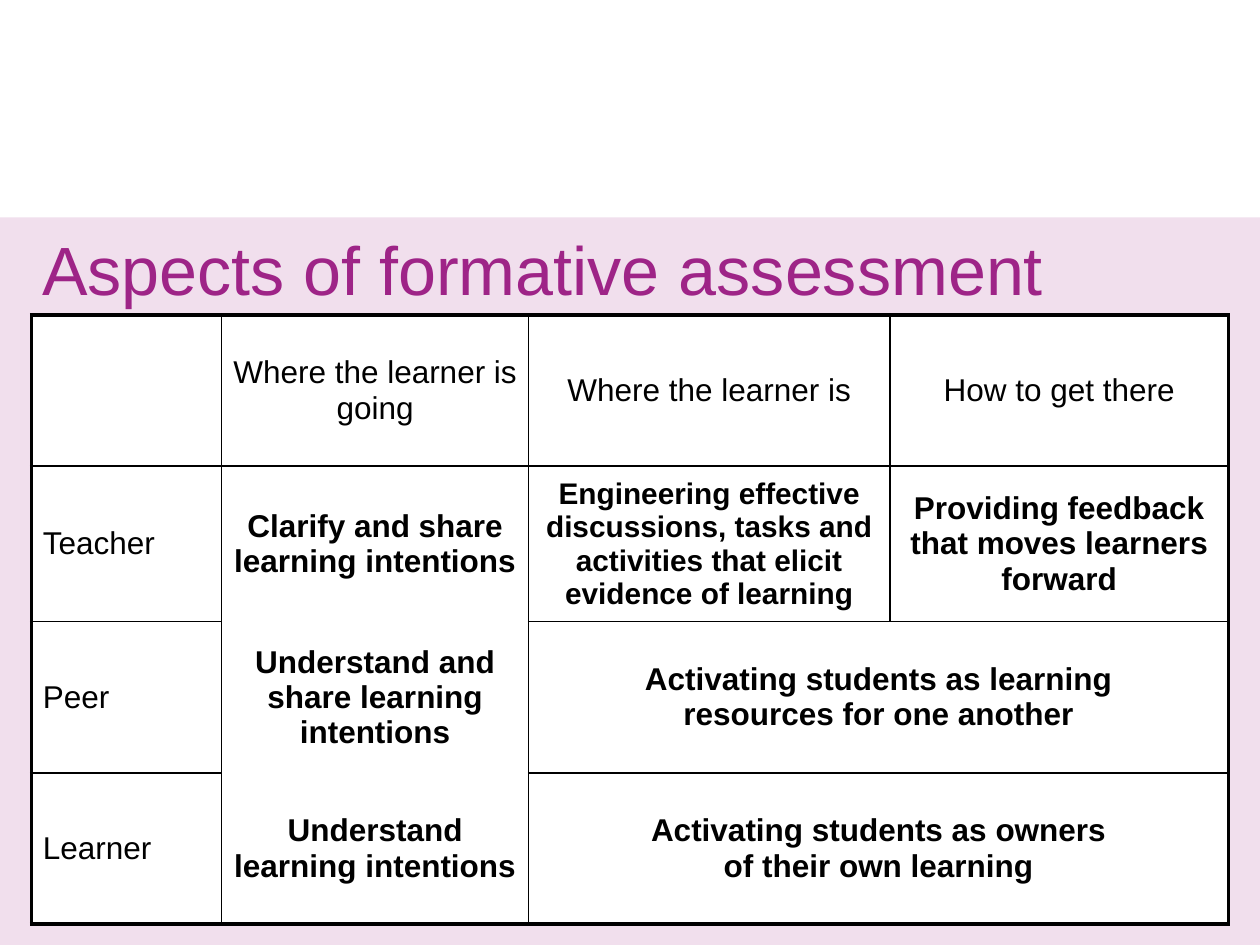
from lxml.etree import SubElement
from pptx import Presentation
from pptx.dml.color import RGBColor
from pptx.enum.shapes import MSO_SHAPE
from pptx.enum.text import MSO_ANCHOR, PP_ALIGN
from pptx.oxml.ns import qn
from pptx.util import Inches, Pt

BLACK, WHITE, PLUM, PINK = "000000", "FFFFFF", "9E2487", "F1DFED"
WIDTH, HEIGHT = Inches(10), Inches(7.5)
COLUMN_SHARES = (1.51, 2.44, 2.87, 2.69)
THIN, THICK = 1, 2.25
ASPECTS = (
    ("", "Where the learner is going", "Where the learner is", "How to get there"),
    ("Teacher", "Clarify and share learning intentions",
     "Engineering effective discussions, tasks and activities that elicit evidence of learning",
     "Providing feedback that moves learners forward"),
    ("Peer", "Understand and share learning intentions",
     "Activating students as learning\nresources for one another", None),
    ("Learner", "Understand learning intentions",
     "Activating students as owners\vof their own learning", None),
)
LAST_ROW, LAST_COLUMN = len(ASPECTS) - 1, len(COLUMN_SHARES) - 1


def color(value):
    return RGBColor.from_string(value)


def paint(target, value):
    target.fill.solid()
    target.fill.fore_color.rgb = color(value)


def style(frame, size, value, bold=False, align=PP_ALIGN.LEFT):
    for paragraph in frame.paragraphs:
        paragraph.alignment = align
        paragraph.font.name = "Arial"
        paragraph.font.size = Pt(size)
        paragraph.font.bold = bold
        paragraph.font.color.rgb = color(value)


def add_backdrop(slide, left, top, width, height):
    backdrop = slide.shapes.add_shape(MSO_SHAPE.RECTANGLE, left, top, width, height)
    backdrop.shadow.inherit = False
    paint(backdrop, PINK)
    backdrop.line.fill.background()


def add_title(slide, left, top, width, height):
    frame = slide.shapes.add_textbox(left, top, width, height).text_frame
    frame.word_wrap = True
    frame.margin_left = frame.margin_right = frame.margin_top = frame.margin_bottom = 0
    frame.vertical_anchor = MSO_ANCHOR.MIDDLE
    frame.text = "Aspects of formative assessment"
    style(frame, 39, PLUM)


def border_widths(row, column):
    intentions = column == 1
    return {
        "a:lnL": THICK if column == 0 else THIN,
        "a:lnR": THICK if column == LAST_COLUMN or (row > 1 and column == 2) else THIN,
        "a:lnT": THICK if row == 0 else 0 if intentions and row > 1 else THIN,
        "a:lnB": THICK if row == LAST_ROW else 0 if intentions and row > 0 else THIN,
    }


def draw_borders(cell, row, column):
    properties = cell._tc.get_or_add_tcPr()
    for position, (side, points) in enumerate(border_widths(row, column).items()):
        line = SubElement(properties, qn(side), w=str(Pt(points)))
        properties.remove(line)
        properties.insert(position, line)
        if points:
            fill = SubElement(line, qn("a:solidFill"))
            SubElement(fill, qn("a:srgbClr"), val=BLACK)
        else:
            SubElement(line, qn("a:noFill"))


def add_aspects(slide, left, top, width, height):
    table = slide.shapes.add_table(len(ASPECTS), len(COLUMN_SHARES),
                                   left, top, width, height).table
    table.first_row = table.horz_banding = False
    for column, share in zip(table.columns, COLUMN_SHARES):
        column.width = int(width * share / sum(COLUMN_SHARES))
    for row, aspects in enumerate(ASPECTS):
        if aspects[-1] is None:
            table.cell(row, 2).merge(table.cell(row, LAST_COLUMN))
        for column, aspect in enumerate(aspects):
            cell = table.cell(row, column)
            paint(cell, WHITE)
            draw_borders(cell, row, column)
            cell.vertical_anchor = MSO_ANCHOR.MIDDLE
            cell.margin_left = cell.margin_right = Inches(0.09)
            if aspect:
                cell.text_frame.text = aspect
            style(cell.text_frame, 17 if (row, column) == (1, 2) else 18, BLACK,
                  bold=row > 0 and column > 0,
                  align=PP_ALIGN.CENTER if column else PP_ALIGN.LEFT)


def main():
    deck = Presentation()
    deck.slide_width, deck.slide_height = WIDTH, HEIGHT
    slide = deck.slides.add_slide(deck.slide_layouts[6])
    band_top = int(HEIGHT * 0.23)
    table_top = HEIGHT // 3
    margin = int(WIDTH * 0.025)
    title_left = WIDTH // 30
    add_backdrop(slide, 0, band_top, WIDTH, HEIGHT - band_top)
    add_title(slide, title_left, table_top - HEIGHT // 10, WIDTH - title_left, HEIGHT // 10)
    add_aspects(slide, margin, table_top, WIDTH - 2 * margin, int(HEIGHT * 0.64))
    deck.save("out.pptx")


if __name__ == "__main__":
    main()
